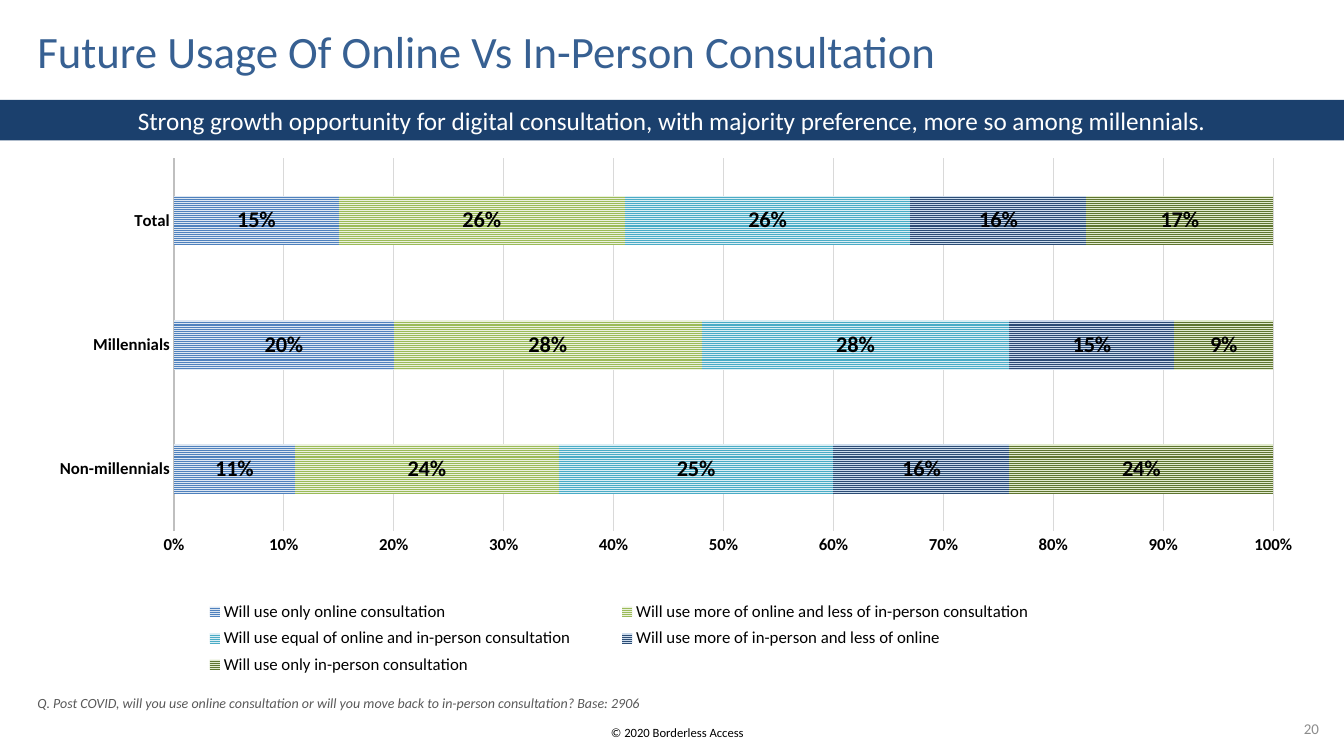
from pptx import Presentation
from pptx.chart.data import CategoryChartData
from pptx.dml.color import RGBColor
from pptx.enum.chart import XL_CHART_TYPE as CT, XL_LABEL_POSITION as LP
from pptx.enum.chart import XL_LEGEND_POSITION as LGP, XL_TICK_MARK as TM
from pptx.enum.dml import MSO_PATTERN
from pptx.enum.shapes import MSO_SHAPE
from pptx.enum.text import MSO_ANCHOR as MA, MSO_AUTO_SIZE, PP_ALIGN as PA
from pptx.oxml import parse_xml
from pptx.oxml.ns import nsdecls, qn
from pptx.util import Cm, Pt


def style(font, size, color, bold=False, italic=False):
    font.name, font.size, font.bold, font.italic = "Calibri", Pt(size), bold, italic
    font.color.rgb = RGBColor.from_string(color)


def place(parent, index, target, x, y, w, h):
    for old in parent.findall(qn("c:layout")):
        parent.remove(old)
    parent.insert(index, parse_xml(
        f'<c:layout {nsdecls("c")}><c:manualLayout>{target}'
        '<c:xMode val="edge"/><c:yMode val="edge"/>'
        f'<c:x val="{x}"/><c:y val="{y}"/><c:w val="{w}"/><c:h val="{h}"/>'
        '</c:manualLayout></c:layout>'))


prs = Presentation()
prs.slide_width, prs.slide_height = Cm(33.87), Cm(19.05)
s = prs.slides.add_slide(prs.slide_layouts[1])
title, note = s.placeholders

banner = s.shapes.add_shape(MSO_SHAPE.RECTANGLE, 0, 0, 0, 0)
banner.shadow.inherit = False
banner.fill.solid()
banner.fill.fore_color.rgb = RGBColor.from_string("1B406D")
banner.line.fill.background()
footer = s.shapes.add_textbox(0, 0, 0, 0)
number = s.shapes.add_textbox(0, 0, 0, 0)

texts = [
    (title, (0.94, 0.79, 28.65, 1.17), PA.LEFT, MA.MIDDLE, 32, "376092",
     "Future Usage Of Online Vs In-Person Consultation"),
    (note, (0.94, 17.5, 32.28, 0.43), PA.LEFT, MA.BOTTOM, 10, "595959",
     "Q. Post COVID, will you use online consultation or will you move back to "
     "in-person consultation? Base: 2906"),
    (banner, (0, 2.52, 33.87, 1.02), PA.CENTER, MA.MIDDLE, 18, "FFFFFF",
     "Strong growth opportunity for digital consultation, with majority "
     "preference, more so among millennials."),
    (footer, (12.32, 18.14, 9.5, 0.64), PA.CENTER, MA.MIDDLE, 9, "000000",
     "© 2020 Borderless Access"),
    (number, (32.82, 18.14, 0.46, 0.46), PA.CENTER, MA.MIDDLE, 10.7, "8C8C8C", "20"),
]
for sp, box, align, anchor, size, color, text in texts:
    sp.left, sp.top, sp.width, sp.height = [Cm(v) for v in box]
    tf = sp.text_frame
    tf.margin_left = tf.margin_right = tf.margin_top = tf.margin_bottom = 0
    tf.auto_size = MSO_AUTO_SIZE.NONE
    tf.word_wrap = sp is not number
    tf.vertical_anchor = anchor
    p = tf.paragraphs[0]
    p.alignment = align
    p.space_before = Pt(0)
    r = p.add_run()
    r.text = text
    style(r.font, size, color, italic=sp is note)

title.text_frame.paragraphs[0].line_spacing = 0.85
pPr = note.text_frame.paragraphs[0]._p.get_or_add_pPr()
pPr.set("marL", "0")
pPr.set("indent", "0")
pPr.append(parse_xml(f'<a:buNone {nsdecls("a")}/>'))

series = [
    ("Will use only online consultation", (0.11, 0.2, 0.15), "4F81BD", "DCE6F2"),
    ("Will use more of online and less of in-person consultation",
     (0.24, 0.28, 0.26), "9BBB59", "EBF1DE"),
    ("Will use equal of online and in-person consultation",
     (0.25, 0.28, 0.26), "4BACC6", "DBEEF4"),
    ("Will use more of in-person and less of online",
     (0.16, 0.15, 0.16), "2C4D75", "CCDBEC"),
    ("Will use only in-person consultation", (0.24, 0.09, 0.17), "5F7530", "E2EBCE"),
]
data = CategoryChartData(number_format="0%")
data.categories = ["Non-millennials", "Millennials", "Total"]
for name, values, fore, back in series:
    data.add_series(name, values)
chart = s.shapes.add_chart(CT.BAR_STACKED_100, Cm(0.94), Cm(3.76),
                           Cm(31.88), Cm(13.54), data).chart
style(chart.font, 10, "000000")
chart.has_title = False

plot = chart.plots[0]
plot.gap_width, plot.overlap = 150, 100
plot.vary_by_categories = False
for ser, (name, values, fore, back) in zip(plot.series, series):
    fill = ser.format.fill
    fill.patterned()
    fill.pattern = MSO_PATTERN.NARROW_HORIZONTAL
    fill.fore_color.rgb = RGBColor.from_string(fore)
    fill.back_color.rgb = RGBColor.from_string(back)
    labels = ser.data_labels
    labels.show_value = True
    labels.position = LP.CENTER
    labels.number_format, labels.number_format_is_linked = "0%", False
    style(labels.font, 16, "000000", bold=True)

cat, val = chart.category_axis, chart.value_axis
for axis in (cat, val):
    axis.major_tick_mark = axis.minor_tick_mark = TM.NONE
    style(axis.tick_labels.font, 12, "000000", bold=True)
cat.format.line.color.rgb = RGBColor.from_string("BFBFBF")
cat.format.line.width = Pt(1.5)
val.format.line.fill.background()
val.minimum_scale, val.maximum_scale, val.major_unit = 0, 1, 0.1
val.tick_labels.number_format, val.tick_labels.number_format_is_linked = "0%", False
val.has_major_gridlines = True
grid = val.major_gridlines.format.line
grid.color.rgb = RGBColor.from_string("D9D9D9")
grid.width = Pt(0.75)

chart.has_legend = True
legend = chart.legend
legend.position = LGP.TOP
legend.include_in_layout = False
style(legend.font, 12, "000000")
place(legend._element, 1, "", 0.1, 0.83, 0.72, 0.16)
place(chart._chartSpace.chart.plotArea, 0, '<c:layoutTarget val="inner"/>',
      0.108, 0.017, 0.869, 0.694)

prs.save("out.pptx")
